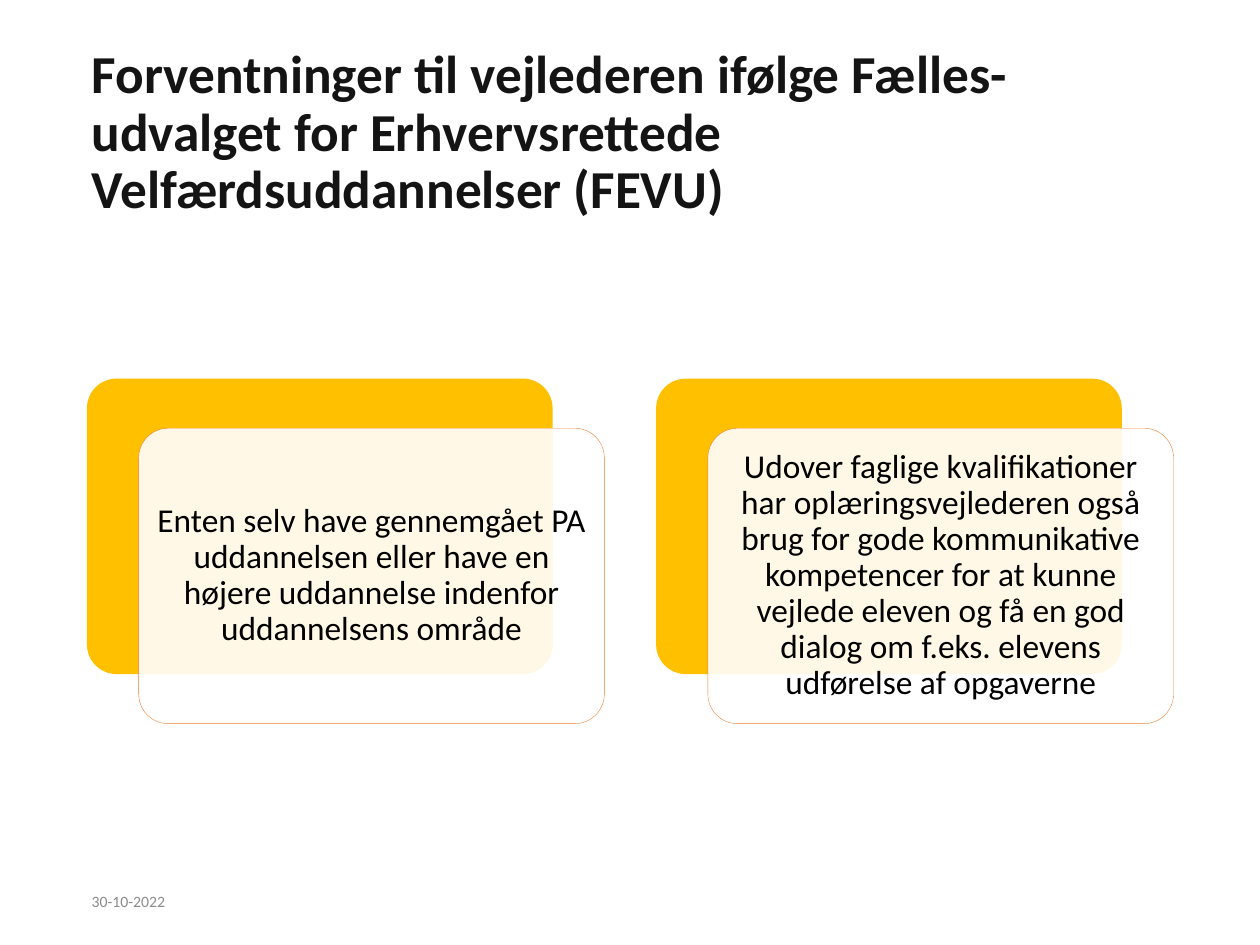
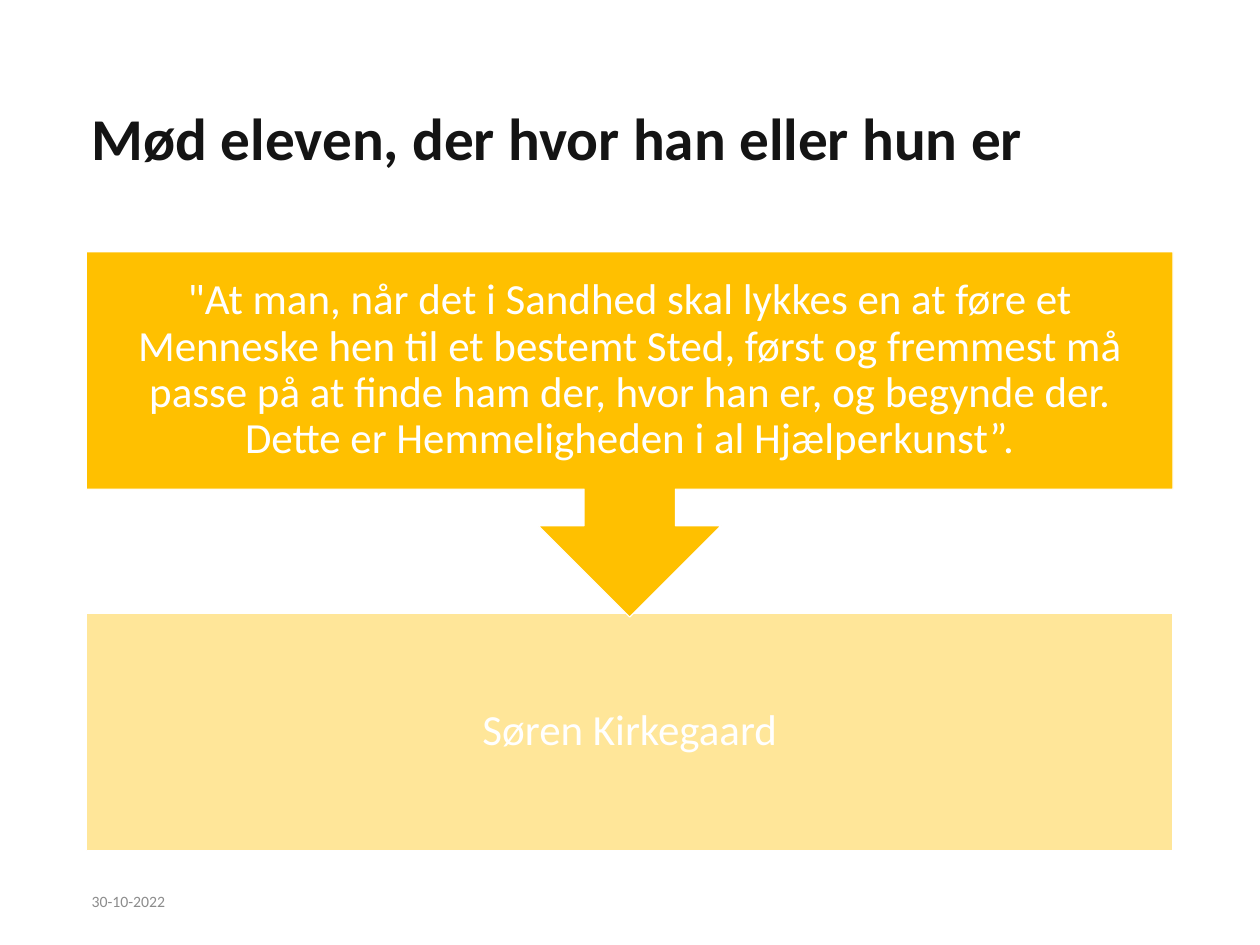
"""Build two slides on the supervisor's role: expectations and meeting the pupil."""
from lxml import etree
from pptx import Presentation
from pptx import util as u
from pptx.dml.color import RGBColor
from pptx.enum import shapes, text
from pptx.oxml import ns

INK = RGBColor(0x14, 0x14, 0x14)
GREY = RGBColor(0x8C, 0x8C, 0x8C)
BLACK = RGBColor(0, 0, 0)
WHITE = RGBColor(0xFF, 0xFF, 0xFF)
GOLD = RGBColor(0xFF, 0xC0, 0x00)
PALE_GOLD = RGBColor(0xFF, 0xE6, 0x99)
ORANGE = RGBColor(0xED, 0x7D, 0x31)
FONT = "Calibri"
LEFT, WIDTH = 1.62, 20.37


def write(shape, content, size, color, bold=False, align=text.PP_ALIGN.LEFT,
          spacing=0.9, inset=0.1):
    frame = shape.text_frame
    frame.word_wrap = True
    frame.vertical_anchor = text.MSO_ANCHOR.MIDDLE
    frame.margin_left = frame.margin_right = u.Inches(inset)
    frame.margin_top = frame.margin_bottom = u.Inches(inset)
    paragraph = frame.paragraphs[0]
    paragraph.alignment = align
    paragraph.line_spacing = spacing
    run = paragraph.add_run()
    run.text = content
    run.font.name = FONT
    run.font.size = u.Pt(size)
    run.font.bold = bold
    run.font.color.rgb = color


def add_box(slide, kind, left, top, width, height, fill, line=None, line_width=1.5):
    shape = slide.shapes.add_shape(kind, u.Inches(left), u.Inches(top),
                                   u.Inches(width), u.Inches(height))
    shape.shadow.inherit = False
    shape.fill.solid()
    shape.fill.fore_color.rgb = fill
    if line is None:
        shape.line.fill.background()
    else:
        shape.line.color.rgb = line
        shape.line.width = u.Pt(line_width)
    return shape


presentation = Presentation()
presentation.slide_width = u.Inches(23.62)
presentation.slide_height = u.Inches(17.72)

titles = [
    ("Forventninger til vejlederen ifølge Fælles-udvalget for Erhvervsrettede "
     "Velfærdsuddannelser (FEVU)", 72, 0.8),
    ("Mød eleven, der hvor han eller hun er", 80, 0.94),
]
for title, size, top in titles:
    slide = presentation.slides.add_slide(presentation.slide_layouts[6])
    title_box = slide.shapes.add_textbox(u.Inches(LEFT), u.Inches(top),
                                         u.Inches(WIDTH), u.Inches(3.42))
    write(title_box, title, size, INK, bold=True)
    date_box = slide.shapes.add_textbox(u.Inches(LEFT), u.Inches(16.42),
                                        u.Inches(5.31), u.Inches(0.94))
    write(date_box, "30-10-2022", 21.3, GREY, spacing=1.0)

expectations_slide, quote_slide = presentation.slides

CARD_WIDTH, CARD_HEIGHT, CARD_TOP, CARD_PITCH = 8.73, 5.54, 7.1, 10.67
OFFSET_X, OFFSET_Y = 0.97, 0.93
expectations = [
    "Enten selv have gennemgået PA uddannelsen eller have en højere uddannelse "
    "indenfor uddannelsens område",
    "Udover faglige kvalifikationer har oplæringsvejlederen også brug for gode "
    "kommunikative kompetencer for at kunne vejlede eleven og få en god dialog "
    "om f.eks. elevens udførelse af opgaverne",
]
rounded = shapes.MSO_SHAPE.ROUNDED_RECTANGLE
for index, expectation in enumerate(expectations):
    card_left = 1.63 + index * CARD_PITCH
    back = add_box(expectations_slide, rounded, card_left, CARD_TOP,
                   CARD_WIDTH, CARD_HEIGHT, GOLD)
    front = add_box(expectations_slide, rounded, card_left + OFFSET_X,
                    CARD_TOP + OFFSET_Y, CARD_WIDTH, CARD_HEIGHT, WHITE, ORANGE, 0.5)
    for card in (back, front):
        card.adjustments[0] = 0.1
    fill_color = front.fill._xPr.find(ns.qn("a:solidFill"))[0]
    etree.SubElement(fill_color, ns.qn("a:alpha"), val="90000")
    write(front, expectation, 45, BLACK, align=text.PP_ALIGN.CENTER, inset=0.19)

panels = [
    (shapes.MSO_SHAPE.RECTANGLE, 11.5, 4.45, PALE_GOLD, "Søren Kirkegaard"),
    (shapes.MSO_SHAPE.DOWN_ARROW_CALLOUT, 4.72, 6.85, GOLD,
     "\"At man, når det i Sandhed skal lykkes en at føre et Menneske hen til et "
     "bestemt Sted, først og fremmest må passe på at finde ham der, hvor han er, "
     "og begynde der. Dette er Hemmeligheden i al Hjælperkunst”."),
]
for kind, top, height, fill, content in panels:
    panel = add_box(quote_slide, kind, LEFT, top, WIDTH, height, fill, WHITE)
    write(panel, content, 58, WHITE, align=text.PP_ALIGN.CENTER, inset=0.45)

presentation.save("out.pptx")
